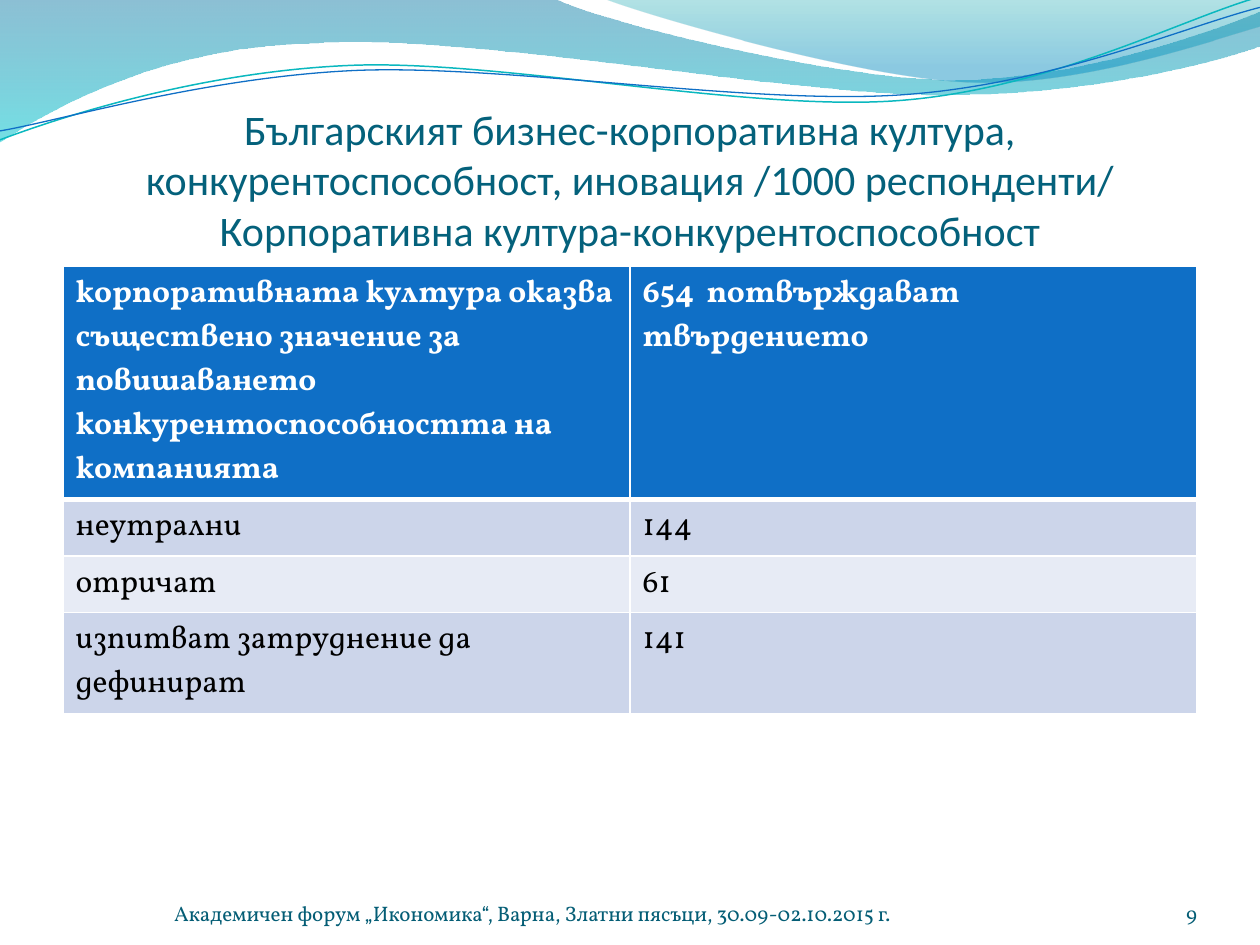
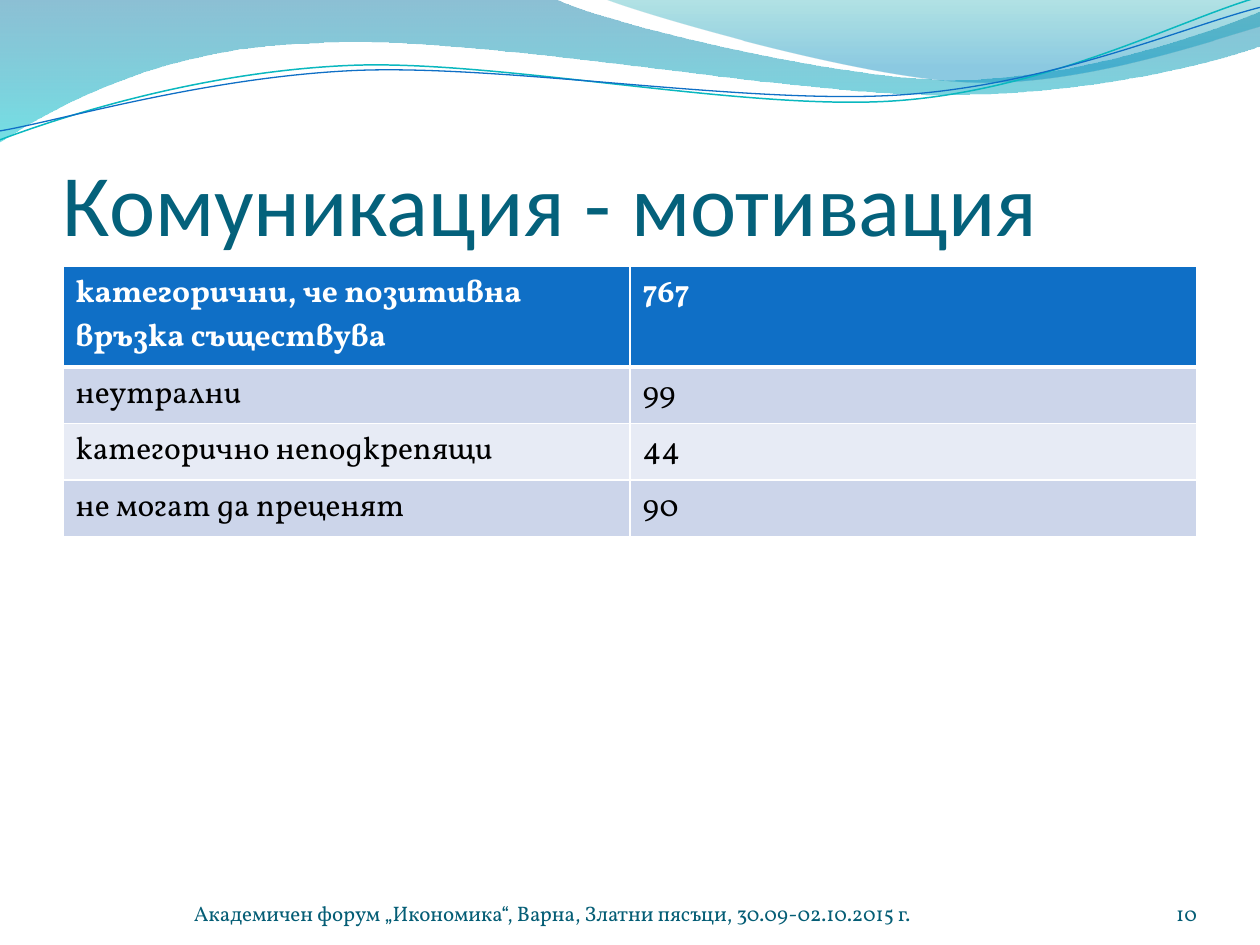
from dataclasses import dataclass

from lxml.etree import SubElement
from pptx import Presentation
from pptx.dml.color import RGBColor as Rgb
from pptx.enum.lang import MSO_LANGUAGE_ID as Language
from pptx.enum.text import MSO_ANCHOR as Anchor, PP_ALIGN as Align
from pptx.oxml.ns import qn
from pptx.util import Cm, Pt


@dataclass(frozen=True)
class Theme:
    title_font: str = "Calibri"
    body_font: str = "Vollkorn"
    title: str = "04617B"
    footer: str = "045D75"
    accent: str = "0F6FC6"
    teal: str = "0AB8BF"
    white: str = "FFFFFF"
    black: str = "000000"
    odd_row: str = "CCD5EA"
    even_row: str = "E7EBF5"
    table_size: int = 18
    footer_size: int = 12


THEME = Theme()
MARGIN, CONTENT_WIDTH = 1.27, 22.86
LINE_HEIGHT, CELL_PADDING = 0.89, 0.25
FOOTER = "Академичен форум „Икономика“, Варна, Златни пясъци, 30.09-02.10.2015 г."

# Outlines in cm: a pair is a straight step, a six-tuple a cubic Bézier step.
# Gradient stops: position, colour, opacity in percent.
BANDS = [
    ([(0, 0), (11.18, -0.03), (12.09, 0.43, 16.87, 1.6, 19.25, 1.6),
      (21.67, 1.6, 24.33, 0.66, 25.4, 0.23), (25.43, 0.91),
      (24.97, 1.12, 22.1, 1.93, 18.95, 1.91),
      (15.8, 1.91, 9.7, 0.71, 6.53, 0.86),
      (3.28, 0.91, 1.17, 2.11, -0.03, 2.87), (0, 0)],
     [(0, "0074A1", 45), (1, "00C6CF", 55)]),
    ([(12.17, -0.03), (12.93, 0.28, 17.32, 1.57, 19.53, 1.65),
      (21.74, 1.75, 24.41, 0.81, 25.4, 0.53), (25.4, 0), (12.17, -0.03)],
     [(0, "00A1A9", 30), (0.8, "008BBF", 45)]),
]
STRANDS = [
    ([(0, 2.82), (1.22, 2.36, 4.01, 1.45, 7.04, 1.32),
      (10.03, 1.19, 15.06, 2.26, 18.11, 2.03),
      (21.16, 1.8, 23.83, 0.38, 25.35, -0.05)], THEME.teal, 0.85),
    ([(0, 2.64), (1.19, 2.44, 4.17, 1.55, 7.19, 1.42),
      (10.24, 1.3, 15.16, 2.13, 18.21, 1.91),
      (21.23, 1.7, 23.9, 0.53, 25.4, 0.15)], THEME.accent, 0.75),
]

# Each table row: number of text lines, statement, respondents.
PAGES = [
    {"number": 9, "title_size": 24, "title_align": Align.CENTER,
     "title": "Българският бизнес-корпоративна култура, конкурентоспособност, "
              "иновация /1000 респонденти/\v"
              "Корпоративна култура-конкурентоспособност",
     "footer_left": 3.51, "footer_width": 16.79,
     "rows": [(5, "корпоративната култура оказва съществено значение за "
                  "повишаването конкурентоспособността на компанията",
               "654  потвърждават твърдението"),
              (1, "неутрални", "144"),
              (1, "отричат", "61"),
              (2, "изпитват затруднение да дефинират", "141")]},
    {"number": 10, "title_size": 50, "title_align": Align.LEFT,
     "title": "Комуникация - мотивация",
     "footer_left": 3.91, "footer_width": 16.99,
     "rows": [(2, "категорични, че позитивна връзка съществува", "767"),
              (1, "неутрални", "99"),
              (1, "категорично неподкрепящи", "44"),
              (1, "не могат да преценят", "90")]},
]


def set_attributes(target, values):
    for name, value in values.items():
        setattr(target, name, value)


def write(frame, text, font, size, color, align=Align.LEFT, **extras):
    para = frame.paragraphs[0]
    para.text = text
    para.alignment = align
    for span in para.runs:
        set_attributes(span.font, {"name": font, "size": Pt(size), **extras})
        span.font.color.rgb = Rgb.from_string(color)


def add_text(page, place, text, top_inset=0, **style):
    """Add a bottom-anchored text box; place is left, top, width, height in cm."""
    box = page.shapes.add_textbox(*map(Cm, place))
    set_attributes(box.text_frame, {
        "word_wrap": True, "vertical_anchor": Anchor.BOTTOM,
        "margin_left": 0, "margin_right": 0,
        "margin_top": Cm(top_inset), "margin_bottom": 0})
    write(box.text_frame, text, **style)


def bend(shape, steps):
    """Turn the straight segments of six-number steps into cubic curves."""
    segments = list(shape.element.iter(qn("a:lnTo")))
    for segment, step in zip(segments, steps[1:]):
        if len(step) == 2:
            continue
        outline = segment.getparent()
        curve = SubElement(outline, qn("a:cubicBezTo"))
        for x, y in zip(step[::2], step[1::2]):
            SubElement(curve, qn("a:pt"), x=str(Cm(x) - shape.left),
                       y=str(Cm(y) - shape.top))
        outline.replace(segment, curve)


def add_outline(page, steps, close):
    start, *others = [tuple(map(Cm, step[-2:])) for step in steps]
    builder = page.shapes.build_freeform(*start)
    builder.add_line_segments(others, close=close)
    shape = builder.convert_to_shape()
    shape.shadow.inherit = False
    bend(shape, steps)
    return shape


def add_band(page, steps, stops):
    band = add_outline(page, steps, close=True)
    band.line.fill.background()
    band.fill.gradient()
    band.fill.gradient_angle = 270
    for stop, (position, color, _) in zip(band.fill.gradient_stops, stops):
        stop.position = position
        stop.color.rgb = Rgb.from_string(color)
    for node, (_, _, opacity) in zip(band.element.iter(qn("a:srgbClr")), stops):
        SubElement(node, qn("a:alpha"), val=str(opacity * 1000))


def add_strand(page, steps, color, width):
    strand = add_outline(page, steps, close=False)
    strand.fill.background()
    strand.line.color.rgb = Rgb.from_string(color)
    strand.line.width = Pt(width)


def set_borders(cell, top, bottom):
    """Draw white cell borders, 1 pt at the sides."""
    properties = cell._tc.get_or_add_tcPr()
    widths = {"a:lnL": 1, "a:lnR": 1, "a:lnT": top, "a:lnB": bottom}
    for index, (tag, width) in enumerate(widths.items()):
        line = SubElement(properties, qn(tag), w=str(Pt(width)))
        fill = SubElement(line, qn("a:solidFill"))
        SubElement(fill, qn("a:srgbClr"), val=THEME.white)
        properties.insert(index, line)


def add_answers(page, rows):
    heights = [Cm(lines * LINE_HEIGHT + CELL_PADDING) for lines, *_ in rows]
    table = page.shapes.add_table(len(rows), 2, Cm(MARGIN), Cm(5.37),
                                  Cm(CONTENT_WIDTH), sum(heights)).table
    for row_index, (_, *texts) in enumerate(rows):
        table.rows[row_index].height = heights[row_index]
        header = row_index == 0
        band = THEME.odd_row if row_index % 2 else THEME.even_row
        for column_index, text in enumerate(texts):
            cell = table.cell(row_index, column_index)
            write(cell.text_frame, text, THEME.body_font, THEME.table_size,
                  THEME.white if header else THEME.black,
                  bold=header, language_id=Language.BULGARIAN)
            cell.fill.solid()
            cell.fill.fore_color.rgb = Rgb.from_string(THEME.accent if header else band)
            # The edge below the header belongs to both neighbouring rows.
            set_borders(cell, top=3 if row_index == 1 else 1, bottom=3 if header else 1)


def add_page(deck, content):
    page = deck.slides.add_slide(deck.slide_layouts[6])
    for band in BANDS:
        add_band(page, *band)
    for strand in STRANDS:
        add_strand(page, *strand)
    add_text(page, (MARGIN, 1.95, CONTENT_WIDTH, 3.18), content["title"],
             top_inset=0.13, font=THEME.title_font, size=content["title_size"],
             color=THEME.title, align=content["title_align"])
    add_answers(page, content["rows"])
    small = {"font": THEME.body_font, "size": THEME.footer_size, "color": THEME.footer}
    add_text(page, (22.02, 17.65, 2.11, 1.02), str(content["number"]),
             align=Align.RIGHT, **small)
    add_text(page, (content["footer_left"], 17.65, content["footer_width"], 1.02),
             FOOTER, **small)


def main():
    deck = Presentation()
    set_attributes(deck, {"slide_width": Cm(25.4), "slide_height": Cm(19.05)})
    for content in PAGES:
        add_page(deck, content)
    deck.save("out.pptx")


if __name__ == "__main__":
    main()
